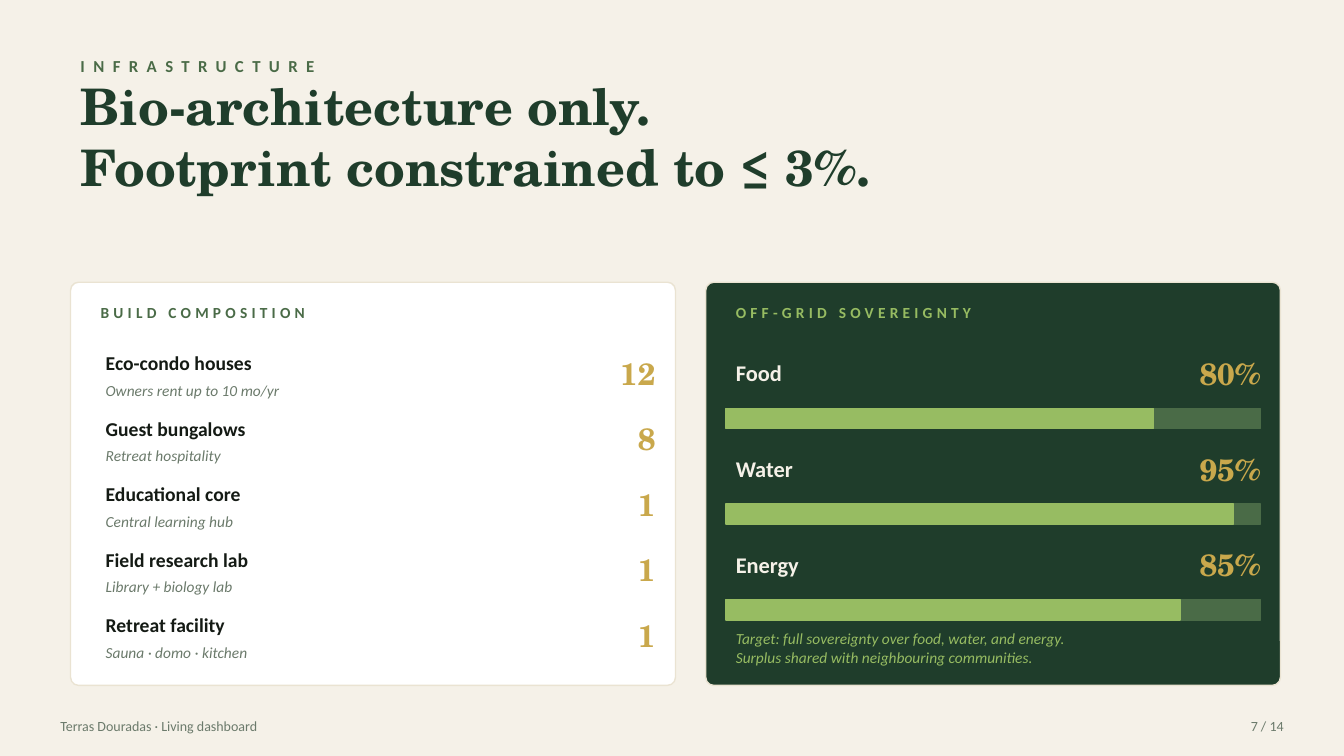
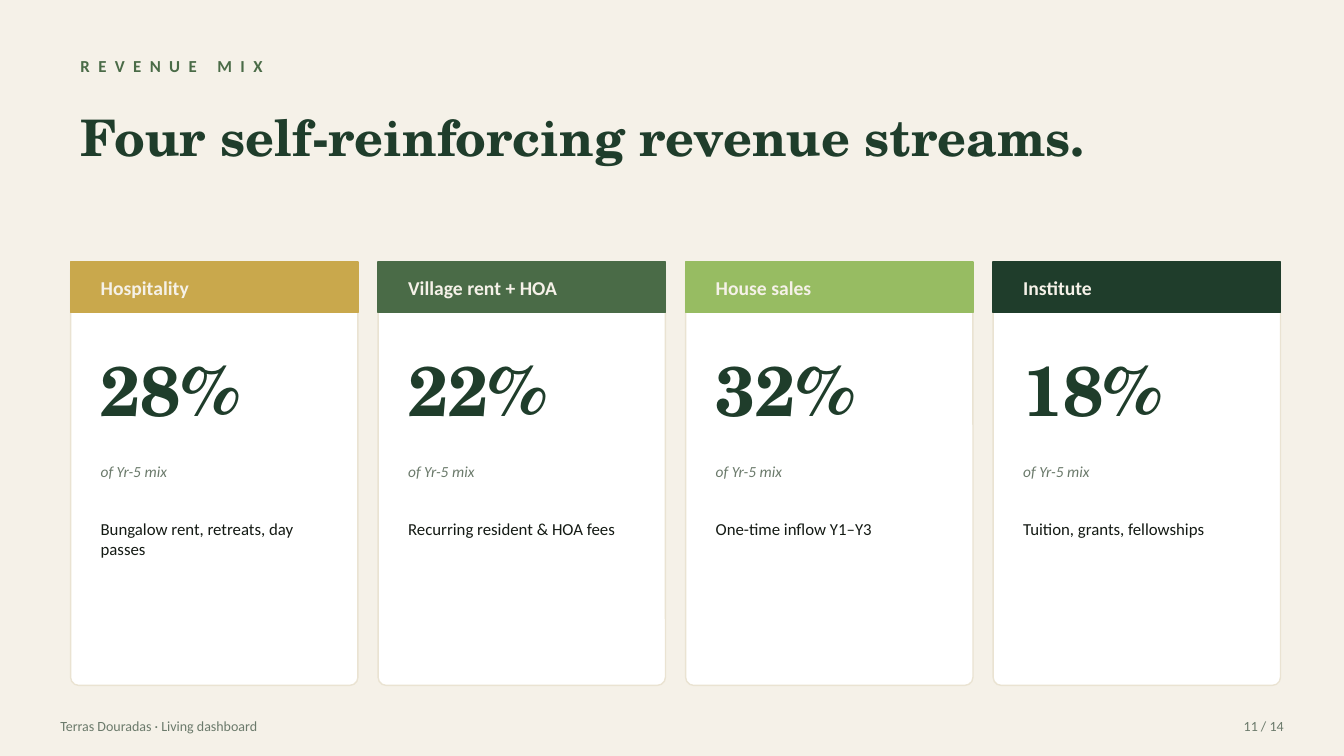
from pptx import Presentation
from pptx.dml.color import RGBColor
from pptx.enum.shapes import MSO_SHAPE as Preset
from pptx.enum.text import MSO_ANCHOR as Anchor, PP_ALIGN as Align
from pptx.util import Inches, Pt

# Shared colours and fonts
CREAM, WHITE, SAND = "F5F1E8", "FFFFFF", "EAE3D2"
FOREST, MOSS, LEAF, GOLD = "1F3D2B", "4A6B47", "97BC62", "C9A84C"
INK, GREY = "141A14", "6B7A6B"
SANS, SERIF = "Calibri", "TeX Gyre Schola"

# Shared text styles: colour and letter spacing are handled apart from the font
EYEBROW = dict(size=12, bold=True, color=MOSS, spacing=6)
TITLE = dict(name=SERIF, size=36, bold=True, color=FOREST)
CARD_LABEL = dict(size=11, bold=True, color=MOSS, spacing=3)
ITEM = dict(size=14, bold=True, color=INK)
NOTE = dict(size=11, italic=True, color=GREY)
FIGURE = dict(name=SERIF, size=22, bold=True, color=GOLD)
BAR_LABEL = dict(size=16, bold=True, color=CREAM)
BAND_LABEL = dict(size=14, bold=True, color=CREAM)
BIG_FIGURE = dict(name=SERIF, size=50, bold=True, color=FOREST)
BODY = dict(size=12, color=INK)
FOOTER = dict(size=10, color=GREY)

SLIDE_TOTAL = 14
CARD_LEFT, CARD_BOTTOM = 0.7, 6.8

# Slide content
BUILDINGS = [
    ("Eco-condo houses", "Owners rent up to 10 mo/yr", "12"),
    ("Guest bungalows", "Retreat hospitality", "8"),
    ("Educational core", "Central learning hub", "1"),
    ("Field research lab", "Library + biology lab", "1"),
    ("Retreat facility", "Sauna · domo · kitchen", "1"),
]
SOVEREIGNTY = [("Food", 80), ("Water", 95), ("Energy", 85)]
STREAMS = [
    ("Hospitality", 28, "Bungalow rent, retreats, day passes", GOLD),
    ("Village rent + HOA", 22, "Recurring resident & HOA fees", MOSS),
    ("House sales", 32, "One-time inflow Y1–Y3", LEAF),
    ("Institute", 18, "Tuition, grants, fellowships", FOREST),
]


def rgb(value):
    return RGBColor.from_string(value)


def add_text(slide, left, top, width, height, lines, style,
             align=Align.LEFT, anchor=Anchor.MIDDLE):
    """Add a text box with one paragraph for each line."""
    box = slide.shapes.add_textbox(
        Inches(left), Inches(top), Inches(width), Inches(height))
    frame = box.text_frame
    frame.word_wrap = True
    frame.vertical_anchor = anchor
    frame.text = lines
    font_values = {"name": SANS, **style}
    color = font_values.pop("color")
    spacing = font_values.pop("spacing", 0)
    font_values["size"] = Pt(font_values["size"])
    for paragraph in frame.paragraphs:
        paragraph.alignment = align
        for run in paragraph.runs:
            for name, value in font_values.items():
                setattr(run.font, name, value)
            run.font.color.rgb = rgb(color)
            if spacing:
                run.font._element.set("spc", str(spacing * 100))


def add_block(slide, left, top, width, height, fill, line=None, rounding=None):
    """Add a filled rectangle, rounded when a rounding is given."""
    preset = Preset.ROUNDED_RECTANGLE if rounding else Preset.RECTANGLE
    shape = slide.shapes.add_shape(
        preset, Inches(left), Inches(top), Inches(width), Inches(height))
    if rounding:
        shape.adjustments[0] = rounding
    shape.shadow.inherit = False
    shape.fill.solid()
    shape.fill.fore_color.rgb = rgb(fill)
    shape.line.color.rgb = rgb(line or fill)
    shape.line.width = Pt(1)


def add_card(slide, left, top, width, fill=WHITE):
    height = CARD_BOTTOM - top
    rounding = 0.08 / min(width, height)
    add_block(slide, left, top, width, height, fill, SAND, rounding)


def add_page(presentation, number, eyebrow, title):
    """Add a slide with background, heading and footer."""
    slide = presentation.slides.add_slide(presentation.slide_layouts[6])
    slide.background.fill.solid()
    slide.background.fill.fore_color.rgb = rgb(CREAM)
    add_text(slide, 0.7, 0.5, 10, 0.3, eyebrow, EYEBROW)
    add_text(slide, 0.7, 0.85, 12, 1, title, TITLE)
    add_text(slide, 0.5, 7.05, 8, 0.3, "Terras Douradas · Living dashboard", FOOTER)
    add_text(slide, 11.83, 7.05, 1, 0.3, f"{number} / {SLIDE_TOTAL}", FOOTER,
             Align.RIGHT)
    return slide


def add_building(slide, top, name, note, count):
    add_text(slide, 0.95, top, 3.3, 0.4, name, ITEM)
    add_text(slide, 0.95, top + 0.32, 3.3, 0.3, note, NOTE)
    add_text(slide, 5.5, top + 0.05, 1.1, 0.5, count, FIGURE, Align.RIGHT)


def add_progress(slide, top, name, percent):
    left, width = 7.2, 5.3
    add_text(slide, left, top, 2, 0.4, name, BAR_LABEL)
    add_text(slide, 10.3, top, 2.3, 0.4, f"{percent}%", FIGURE, Align.RIGHT)
    for share, color in ((100, MOSS), (percent, LEAF)):
        add_block(slide, left, top + 0.55, width * share / 100, 0.2, color)


def add_stream(slide, left, name, percent, detail, color):
    top, width = 2.6, 2.85
    text_left = left + 0.2
    add_card(slide, left, top, width)
    add_block(slide, left, top, width, 0.5, color)
    add_text(slide, text_left, 2.65, 2.6, 0.4, name, BAND_LABEL)
    add_text(slide, text_left, 3.25, 2.5, 1.2, f"{percent}%", BIG_FIGURE)
    add_text(slide, text_left, 4.5, 2.5, 0.35, "of Yr-5 mix", NOTE)
    add_text(slide, text_left, 5.1, 2.5, 1.5, detail, BODY, anchor=Anchor.TOP)


def build_infrastructure(presentation):
    slide = add_page(presentation, 7, "INFRASTRUCTURE",
                     "Bio-architecture only.\nFootprint constrained to ≤ 3%.")
    # Build composition
    add_card(slide, CARD_LEFT, 2.8, 6)
    add_text(slide, 0.9, 2.95, 5, 0.3, "BUILD COMPOSITION", CARD_LABEL)
    for row, building in enumerate(BUILDINGS):
        add_building(slide, 3.4 + row * 0.65, *building)
    # Off-grid sovereignty
    add_card(slide, 7, 2.8, 5.7, FOREST)
    add_text(slide, 7.2, 2.95, 5, 0.3, "OFF-GRID SOVEREIGNTY",
             {**CARD_LABEL, "color": LEAF})
    for row, resource in enumerate(SOVEREIGNTY):
        add_progress(slide, 3.5 + row * 0.95, *resource)
    add_text(slide, 7.2, 6.15, 5.3, 0.55,
             "Target: full sovereignty over food, water, and energy.\n"
             "Surplus shared with neighbouring communities.",
             {**NOTE, "color": LEAF})


def build_revenue(presentation):
    slide = add_page(presentation, 11, "REVENUE MIX",
                     "Four self-reinforcing revenue streams.")
    for column, stream in enumerate(STREAMS):
        add_stream(slide, CARD_LEFT + column * 3.05, *stream)


def main():
    presentation = Presentation()
    presentation.slide_width = Inches(13.33)
    presentation.slide_height = Inches(7.5)
    build_infrastructure(presentation)
    build_revenue(presentation)
    presentation.save("out.pptx")


if __name__ == "__main__":
    main()
